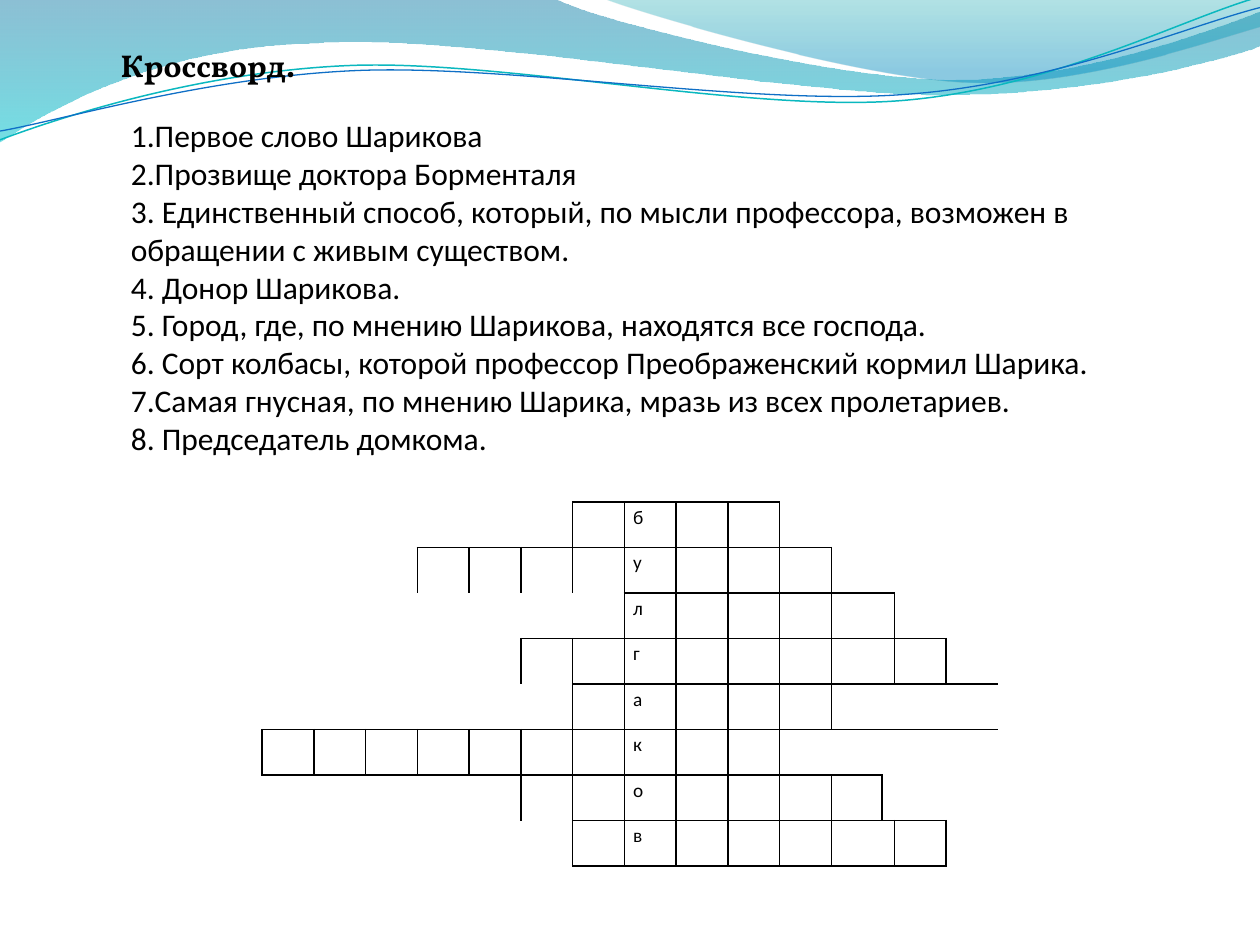
from dataclasses import dataclass
from math import cos, radians, sin

from lxml import etree
from pptx import Presentation
from pptx.dml.color import RGBColor
from pptx.enum.text import MSO_ANCHOR, MSO_AUTO_SIZE
from pptx.oxml.ns import qn
from pptx.util import Emu, Inches, Pt

MIDDLE = MSO_ANCHOR.MIDDLE
TOP = MSO_ANCHOR.TOP
GROW = MSO_AUTO_SIZE.SHAPE_TO_FIT_TEXT
UNIT = Inches(0.1)
SIDES = "LRTB"


@dataclass(frozen=True)
class Theme:
    ink: str = "000000"
    heading_font: str = "Vollkorn"
    body_font: str = "Calibri"
    text_size: float = 18
    letter_size: float = 11
    border: float = 1


@dataclass(frozen=True)
class Stop:
    position: float
    color: str
    opacity: int


@dataclass(frozen=True)
class Wave:
    segments: tuple
    stops: tuple = ()
    line: str = ""
    width: float = 0
    tilt: float = 0
    center: tuple = (0, 0)


@dataclass(frozen=True)
class Region:
    row: int
    col: int
    cols: int
    edges: str = ""
    rows: int = 1


THEME = Theme()
WAVES = (
    Wave(((0, 0), (44, -0.1), (47.6, 1.7, 66.4, 6.3, 75.8, 6.3),
          (85.3, 6.3, 95.8, 2.6, 100, 0.9), (100.1, 3.6),
          (98.3, 4.4, 87, 7.6, 74.6, 7.5), (62.2, 7.5, 38.2, 2.8, 25.7, 3.4),
          (12.9, 3.6, 4.6, 8.3, -0.1, 11.3)),
         stops=(Stop(0, "0074A1", 45), Stop(1, "00C6CF", 55))),
    Wave(((47.9, -0.1), (50.9, 1.1, 68.2, 6.2, 76.9, 6.5),
          (85.6, 6.9, 96.1, 3.2, 100, 2.1), (100, 0)),
         stops=(Stop(0, "00A1A9", 30), Stop(0.8, "008BBF", 45))),
    Wave(((0, 11.1), (4.8, 9.3, 15.8, 5.7, 27.7, 5.2),
          (39.5, 4.7, 59.3, 8.9, 71.3, 8), (83.3, 7.1, 93.8, 1.5, 99.8, -0.2)),
         line="0AB8BF", width=0.85, tilt=-2.7, center=(49.9, 5.75)),
    Wave(((0, 10.4), (4.7, 9.6, 16.4, 6.1, 28.3, 5.6),
          (40.3, 5.1, 59.7, 8.4, 71.7, 7.5), (83.6, 6.7, 94.1, 2.1, 100, 0.6)),
         line="0F6FC6", width=0.75, tilt=-2.7, center=(49.95, 5.9)),
)
CLUES = (
    "1.Первое слово Шарикова",
    "2.Прозвище доктора Борменталя",
    "3. Единственный способ, который, по мысли профессора, возможен в обращении с живым существом.",
    "4. Донор Шарикова.",
    "5. Город, где, по мнению Шарикова, находятся все господа.",
    "6. Сорт колбасы, которой профессор Преображенский кормил Шарика.",
    "7.Самая гнусная, по мнению Шарика, мразь из всех пролетариев.",
    "8. Председатель домкома.",
)
KEYWORD = "булгаков"
KEY_COL = 8
COL_SHARES = (4.1,) * 12 + (4, 1) + (4.1,) * 3
REGIONS = (
    Region(0, 0, 7, "R"), Region(0, 11, 6, "LB"),
    Region(1, 0, 4, "R"), Region(1, 12, 5, "LB"),
    Region(2, 0, 8, "R"), Region(2, 12, 2, SIDES), Region(2, 14, 3, "LB"),
    Region(3, 0, 6, "R"), Region(3, 12, 2, SIDES), Region(3, 15, 2, "L"),
    Region(4, 0, 7, "R"), Region(4, 12, 4, "LT"), Region(4, 16, 1, rows=4),
    Region(5, 0, 1, "R"), Region(5, 11, 5, "LTB"),
    Region(6, 0, 1), Region(6, 1, 5, "TR"), Region(6, 13, 3, "LB"),
    Region(7, 0, 7, "R"), Region(7, 12, 2, SIDES), Region(7, 15, 1, "L"),
)


def units(value: float) -> Emu:
    """Convert grid units to a length."""
    return Emu(round(value * UNIT))


def untilt(wave: Wave, x: float, y: float) -> tuple:
    """Place a point of a wave as it lies before the wave is tilted."""
    cx, cy = wave.center
    angle = radians(-wave.tilt)
    dx, dy = x - cx, y - cy
    return (units(cx + dx * cos(angle) - dy * sin(angle)),
            units(cy + dx * sin(angle) + dy * cos(angle)))


def bend(sp, segments: tuple) -> None:
    """Turn each run of three line points into one cubic curve."""
    lines = iter(list(sp._element.iter(qn("a:lnTo"))))
    for segment in segments:
        first = next(lines)
        if len(segment) == 2:
            continue
        first.tag = qn("a:cubicBezTo")
        for _ in range(2):
            line = next(lines)
            first.append(line[0])
            line.getparent().remove(line)


def draw_wave(s, wave: Wave) -> None:
    """Draw a filled wave or a thin wave line."""
    points = [untilt(wave, *segment[i:i + 2])
              for segment in wave.segments for i in range(0, len(segment), 2)]
    builder = s.shapes.build_freeform(*points[0])
    builder.add_line_segments(points[1:], close=bool(wave.stops))
    sp = builder.convert_to_shape()
    bend(sp, wave.segments[1:])
    sp.rotation = wave.tilt
    sp.shadow.inherit = False
    if not wave.stops:
        sp.fill.background()
        sp.line.color.rgb = RGBColor.from_string(wave.line)
        sp.line.width = Pt(wave.width)
        return
    sp.fill.gradient()
    sp.fill.gradient_angle = 270
    for target, stop in zip(sp.fill.gradient_stops, wave.stops):
        target.position = stop.position
        target.color.rgb = RGBColor.from_string(stop.color)
    for color, stop in zip(sp._element.iter(qn("a:srgbClr")), wave.stops):
        etree.SubElement(color, qn("a:alpha"), val=str(stop.opacity * 1000))
    sp.line.fill.background()


def format_text(tf, font: str, size: float, bold: bool = False) -> None:
    """Give every run of a text frame one font."""
    for p in tf.paragraphs:
        for r in p.runs:
            r.font.name = font
            r.font.size = Pt(size)
            r.font.bold = bold
            r.font.color.rgb = RGBColor.from_string(THEME.ink)


def draw_text(s, box: tuple, text: str, font: str, anchor, bold: bool = False) -> None:
    """Add a wrapped text box with one paragraph a line."""
    tf = s.shapes.add_textbox(*map(units, box)).text_frame
    tf.word_wrap = True
    tf.auto_size = GROW
    tf.vertical_anchor = anchor
    tf.text = text
    format_text(tf, font, THEME.text_size, bold)


def style_cell(cell, edges: str) -> None:
    """Clear a cell and rule only the given edges."""
    cell.fill.background()
    cell.margin_left = cell.margin_right = Inches(0.07)
    cell.margin_top = cell.margin_bottom = 0
    for index, side in enumerate(SIDES):
        ln = etree.Element(qn(f"a:ln{side}"), w=str(Pt(THEME.border)))
        if side in edges:
            fill = etree.SubElement(ln, qn("a:solidFill"))
            etree.SubElement(fill, qn("a:srgbClr"), val=THEME.ink)
        else:
            etree.SubElement(ln, qn("a:noFill"))
        cell._tc.get_or_add_tcPr().insert(index, ln)


def draw_crossword(s, box: tuple) -> None:
    """Draw the crossword grid with its keyword column."""
    rows, cols = len(KEYWORD), len(COL_SHARES)
    table = s.shapes.add_table(rows, cols, *map(units, box)).table
    table.first_row = table.horz_banding = False
    for column, share in zip(table.columns, COL_SHARES):
        column.width = units(box[2] * share / sum(COL_SHARES))
    edges = {(r, c): SIDES for r in range(rows) for c in range(cols)}
    for area in REGIONS:
        last_row, last_col = area.row + area.rows - 1, area.col + area.cols - 1
        if area.rows * area.cols > 1:
            table.cell(area.row, area.col).merge(table.cell(last_row, last_col))
        for r in range(area.row, last_row + 1):
            for c in range(area.col, last_col + 1):
                edges[r, c] = area.edges
    for (r, c), sides in edges.items():
        style_cell(table.cell(r, c), sides)
    for r, letter in enumerate(KEYWORD):
        tf = table.cell(r, KEY_COL).text_frame
        tf.text = letter
        tf.paragraphs[0].line_spacing = 1.15
        format_text(tf, THEME.body_font, THEME.letter_size)


def main() -> None:
    """Build and save the crossword slide."""
    prs = Presentation()
    prs.slide_width, prs.slide_height = units(100), units(75)
    s = prs.slides.add_slide(prs.slide_layouts[6])
    for wave in WAVES:
        draw_wave(s, wave)
    draw_text(s, (9.4, 8.6, 83.6, 28.3), "\n".join(CLUES), THEME.body_font, MIDDLE)
    draw_crossword(s, (16.7, 39.85, 66.65, 28.9))
    draw_text(s, (8.6, 3.15, 46.1, 4), "Кроссворд.", THEME.heading_font, TOP, bold=True)
    prs.save("out.pptx")


if __name__ == "__main__":
    main()
